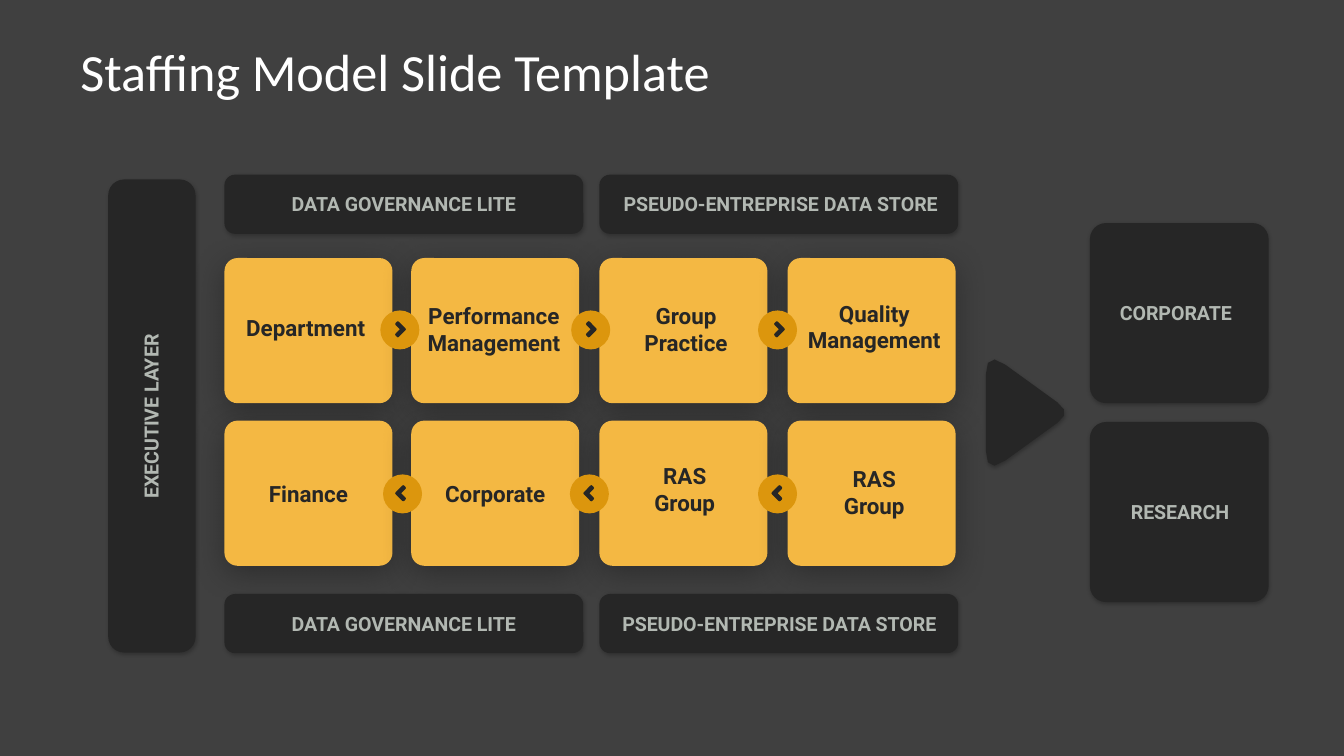
from dataclasses import dataclass
from typing import Optional

from lxml.etree import SubElement
from pptx import Presentation
from pptx.dml.color import RGBColor
from pptx.enum.shapes import MSO_SHAPE as Shape
from pptx.enum.text import MSO_ANCHOR as Anchor, MSO_AUTO_SIZE as AutoSize, PP_ALIGN as Align
from pptx.oxml.ns import qn
from pptx.util import Pt

PX = 9144  # EMU per px, 100 px to the inch
DARK, AMBER, OCHRE, GREY = "262626", "F4B843", "DC960D", "B2B8B2"


@dataclass
class Shadow:
    color: str
    alpha: int
    blur: int
    dist: int
    angle: int


@dataclass
class Card:
    x: int
    y: int
    w: int
    h: int
    fill: str
    adj: float
    shadow: Shadow
    rotation: int = 0


@dataclass
class Label:
    text: str
    x: int
    y: int
    w: int
    lines: int = 1
    rotation: int = 0


@dataclass
class Outline:
    """Size in px; corners (x, y, rounding) in tenths of a px."""
    w: int
    h: int
    corners: list
    steps: int


@dataclass
class ButtonRow:
    y: int
    rotation: int
    chevron_y: int
    xs: list  # button left, chevron left


SOFT = Shadow("000000", 23, 2, 1, 70)
DEEP = Shadow("0D0D0D", 37, 17, 4, 90)

CHEVRON = Outline(8, 12, [(24, -2, 12), (86, 60, 12), (24, 122, 12),
                          (0, 98, 12), (38, 60, 0), (0, 22, 12)], 2)
TRIANGLE = Outline(79, 58, [(0, 0, 180), (930, 0, 180), (465, 640, 130)], 3)

COLUMNS = [167 + 419 * i // 3 for i in range(4)]
ROWS = [192, 313]

CARDS = [
    *[Card(811, y, 133, 134, DARK, 0.09, SOFT) for y in (314, 166)],
    *[Card(x, y, 125, 108, AMBER, 0.09, DEEP) for y in ROWS for x in COLUMNS],
    *[Card(x, y, 267, 44, DARK, 0.18, SOFT) for y in (130, 442) for x in COLUMNS[::2]],
    Card(-63, 277, 352, 65, DARK, 0.18, SOFT, 270),
]

BUTTON_ROWS = [
    ButtonRow(231, 0, 239, [(283, 294), (425, 436), (564, 576)]),
    ButtonRow(353, 180, 361, [(285, 294), (424, 434), (564, 574)]),
]

TEAM_LABELS = [
    Label("Department", 177, 234, 101),
    Label("Performance Management", 312, 225, 111, 2),
    Label("Group Practice", 468, 225, 85, 2),
    Label("Quality Management", 595, 223, 111, 2),
    Label("Finance", 195, 357, 69),
    Label("Corporate", 313, 357, 111),
    Label("RAS Group", 478, 344, 63, 2),
    Label("RAS Group", 619, 346, 63, 2),
]
LAYER_LABELS = [
    Label("DATA GOVERNANCE LITE", 208, 143, 185),
    Label("PSEUDO-ENTREPRISE DATA STORE", 456, 143, 250),
    Label("DATA GOVERNANCE LITE", 208, 455, 185),
    Label("PSEUDO-ENTREPRISE DATA STORE", 455, 455, 250),
    Label("EXECUTIVE LAYER", 43, 301, 139, rotation=270),
    Label("CORPORATE", 831, 224, 88),
    Label("RESEARCH", 834, 372, 88),
]


def paint(fill, color: str) -> None:
    fill.solid()
    fill.fore_color.rgb = RGBColor.from_string(color)


def style(s, color: str, shadow: Optional[Shadow] = None, rotation: int = 0) -> None:
    paint(s.fill, color)
    s.line.fill.background()
    s.rotation = rotation
    s.shadow.inherit = False
    if shadow:
        effects = s._element.spPr.find(qn("a:effectLst"))
        outer = SubElement(effects, qn("a:outerShdw"), blurRad=str(Pt(shadow.blur)),
                           dist=str(Pt(shadow.dist)), dir=str(shadow.angle * 60000),
                           algn="ctr", rotWithShape="0")
        clr = SubElement(outer, qn("a:srgbClr"), val=shadow.color)
        SubElement(clr, qn("a:alpha"), val=str(shadow.alpha * 1000))


def add_card(shapes, card: Card) -> None:
    s = shapes.add_shape(Shape.ROUNDED_RECTANGLE,
                         *(v * PX for v in (card.x, card.y, card.w, card.h)))
    s.adjustments[0] = card.adj
    style(s, card.fill, card.shadow, card.rotation)


def add_button(shapes, x: int, y: int) -> None:
    s = shapes.add_shape(Shape.OVAL, x * PX, y * PX, 29 * PX, 29 * PX)
    style(s, OCHRE)


def rounded_points(outline: Outline) -> list:
    """Replace each corner by points along a curve that touches both sides."""
    points, corners = [], outline.corners
    for i, (x, y, trim) in enumerate(corners):
        if not trim:
            points.append((x, y))
            continue
        ends = []
        for nx, ny, _ in (corners[i - 1], corners[(i + 1) % len(corners)]):
            k = trim / ((nx - x) ** 2 + (ny - y) ** 2) ** 0.5
            ends.append((x + (nx - x) * k, y + (ny - y) * k))
        (ax, ay), (bx, by) = ends
        for n in range(outline.steps + 1):
            t = n / outline.steps
            u = 1 - t
            points.append((u * u * ax + 2 * u * t * x + t * t * bx,
                           u * u * ay + 2 * u * t * y + t * t * by))
    return points


def add_outline(shapes, outline: Outline, x: int, y: int, rotation: int = 0,
                shadow: Optional[Shadow] = None) -> None:
    first, *rest = rounded_points(outline)
    builder = shapes.build_freeform(*first, scale=PX / 10)
    builder.add_line_segments(rest, close=True)
    s = builder.convert_to_shape()
    s.left, s.top, s.width, s.height = (v * PX for v in (x, y, outline.w, outline.h))
    style(s, DARK, shadow, rotation)


def add_text(shapes, text: str, x: int, y: int, w: int, h: int, *, size: float, color: str,
             font: str = "Roboto", bold: bool = True, align=Align.CENTER, anchor=Anchor.TOP,
             inset: tuple = (0, 0), fit: bool = True, rotation: int = 0) -> None:
    s = shapes.add_textbox(x * PX, y * PX, w * PX, h * PX)
    s.rotation = rotation
    tf = s.text_frame
    tf.word_wrap = True
    tf.auto_size = AutoSize.SHAPE_TO_FIT_TEXT if fit else AutoSize.NONE
    tf.vertical_anchor = anchor
    tf.margin_left = tf.margin_right = inset[0] * PX
    tf.margin_top = tf.margin_bottom = inset[1] * PX
    p = tf.paragraphs[0]
    p.alignment = align
    r = p.add_run()
    r.text = text
    r.font.name, r.font.size, r.font.bold = font, Pt(size), bold
    r.font.color.rgb = RGBColor.from_string(color)


def add_labels(shapes, labels: list, line_height: int, size: float, color: str) -> None:
    for label in labels:
        add_text(shapes, label.text, label.x, label.y, label.w, label.lines * line_height,
                 size=size, color=color, rotation=label.rotation)


def main() -> None:
    prs = Presentation()
    prs.slide_width, prs.slide_height = 1000 * PX, 1125 * PX // 2
    slide = prs.slides.add_slide(prs.slide_layouts[6])
    paint(slide.background.fill, "404040")
    shapes = slide.shapes

    # Cards and title
    for card in CARDS:
        add_card(shapes, card)
    add_text(shapes, "Staffing Model Slide Template", 50, 23, 900, 59, size=28, color="FFFFFF",
             font="Calibri", bold=False, align=Align.LEFT, anchor=Anchor.MIDDLE,
             inset=(10, 5), fit=False)

    # Flow arrows
    for row in BUTTON_ROWS:
        for button_x, chevron_x in row.xs:
            add_button(shapes, button_x, row.y)
            add_outline(shapes, CHEVRON, chevron_x, row.chevron_y, row.rotation)
    add_outline(shapes, TRIANGLE, 723, 278, 270, SOFT)

    # Labels
    add_labels(shapes, TEAM_LABELS, 20, 12, DARK)
    add_labels(shapes, LAYER_LABELS, 18, 10.5, GREY)
    prs.save("out.pptx")


if __name__ == "__main__":
    main()
